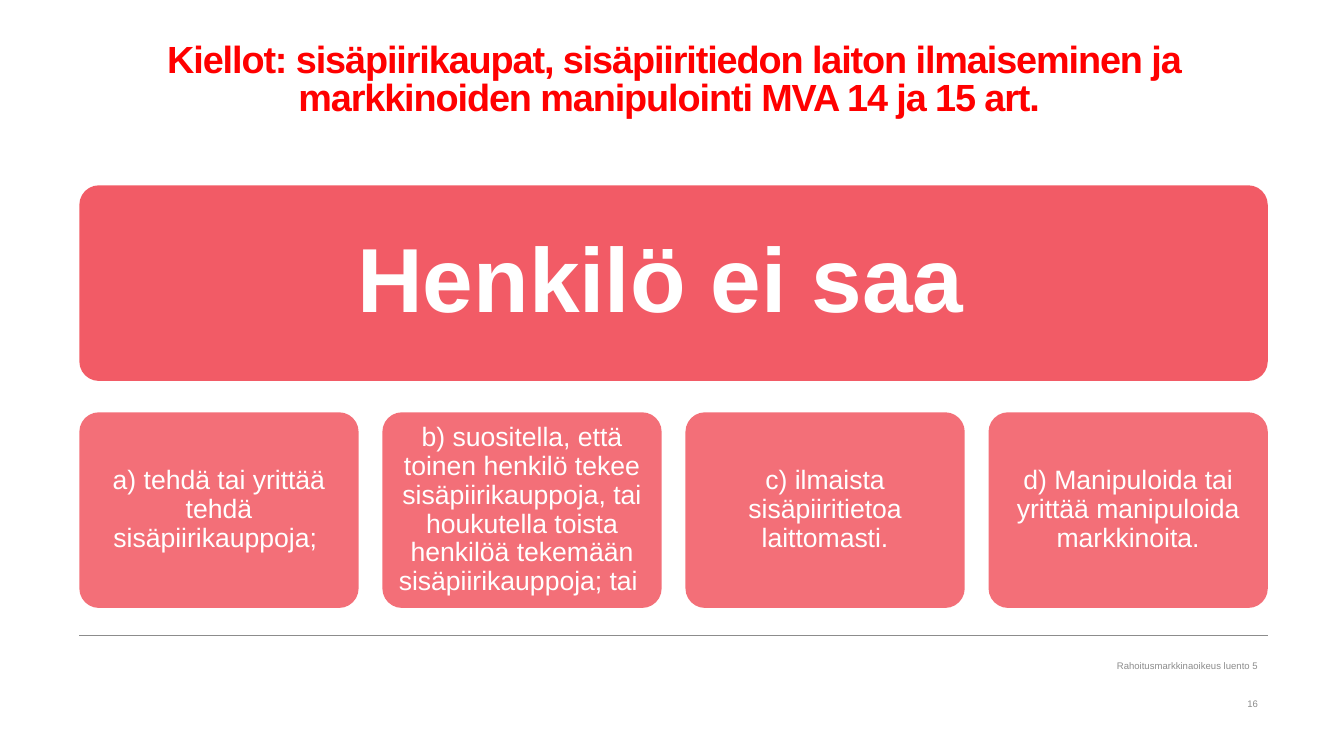
"""Build the slide on prohibited insider dealing and market manipulation."""
from lxml.etree import SubElement
from pptx import Presentation
from pptx.dml.color import RGBColor
from pptx.enum.shapes import MSO_CONNECTOR, MSO_SHAPE
from pptx.enum.text import MSO_ANCHOR, PP_ALIGN
from pptx.oxml.ns import qn
from pptx.util import Cm, Pt

RED = RGBColor(0xFF, 0x00, 0x00)
CORAL = RGBColor(0xEF, 0x33, 0x40)
WHITE = RGBColor(0xFF, 0xFF, 0xFF)
GREY = RGBColor(0x8C, 0x8C, 0x8C)

LEFT, WIDTH = 2.0, 29.95
BOX_HEIGHT = 4.93
BANNER_TOP, CARD_TOP = 4.67, 10.39
CARD_GAP = 0.6
RULE_TOP = 16.02
TITLE = ("Kiellot: sisäpiirikaupat, sisäpiiritiedon laiton ilmaiseminen ja "
         "markkinoiden manipulointi MVA 14 ja 15 art. ")
PROHIBITIONS = [
    "a) tehdä tai yrittää tehdä sisäpiirikauppoja; ",
    "b) suositella, että toinen henkilö tekee sisäpiirikauppoja, tai "
    "houkutella toista henkilöä tekemään sisäpiirikauppoja; tai ",
    "c) ilmaista sisäpiiritietoa laittomasti.",
    "d) Manipuloida tai yrittää manipuloida markkinoita.",
]
FOOTERS = [("Rahoitusmarkkinaoikeus luento 5", 16.54), ("16", 17.5)]


class SlideBuilder:
    """Hold the shared style and the slide being built."""

    font_name = "Arial"

    def __init__(self, slide):
        """Keep the slide to draw on."""
        self.slide = slide

    def fill_text(self, shape, text, font, insets, align=PP_ALIGN.CENTER,
                  anchor=MSO_ANCHOR.MIDDLE, line_spacing=1.0, tracking=0):
        """Put one formatted paragraph into a shape."""
        frame = shape.text_frame
        sides = ("margin_left", "margin_top", "margin_right", "margin_bottom")
        frame_format = dict(zip(sides, map(Cm, insets)))
        frame_format.update(word_wrap=True, vertical_anchor=anchor)
        paragraph = frame.paragraphs[0]
        run = paragraph.add_run()
        run.text = text
        run.font.color.rgb = font["color"]
        font_format = {"name": self.font_name, "size": Pt(font["size"]),
                       "bold": font.get("bold", False)}
        paragraph_format = {"alignment": align, "line_spacing": line_spacing}
        for target, values in ((frame, frame_format), (run.font, font_format),
                               (paragraph, paragraph_format)):
            for name, value in values.items():
                setattr(target, name, value)
        if tracking:
            run._r.get_or_add_rPr().set("spc", str(tracking))

    def text_box(self, text, left, top, width, height, font, insets, **layout):
        """Add a plain text box."""
        shape = self.slide.shapes.add_textbox(
            Cm(left), Cm(top), Cm(width), Cm(height))
        self.fill_text(shape, text, font, insets, **layout)

    def rounded_box(self, text, left, top, width, opacity, font, inset):
        """Add a translucent rounded box with centred text."""
        shape = self.slide.shapes.add_shape(
            MSO_SHAPE.ROUNDED_RECTANGLE,
            Cm(left), Cm(top), Cm(width), Cm(BOX_HEIGHT))
        shape.adjustments[0] = 0.1
        shape.shadow.inherit = False
        shape.fill.solid()
        shape.fill.fore_color.rgb = CORAL
        color = shape._element.spPr.find(qn("a:solidFill"))[0]
        SubElement(color, qn("a:alpha")).set("val", str(opacity * 1000))
        shape.line.fill.background()
        self.fill_text(shape, text, font, [inset] * 4, line_spacing=0.9)

    def rule(self, left, top, width):
        """Add a thin horizontal line."""
        connector = self.slide.shapes.add_connector(
            MSO_CONNECTOR.STRAIGHT,
            Cm(left), Cm(top), Cm(left + width), Cm(top))
        connector.line.color.rgb = GREY
        connector.line.width = Pt(1)
        SubElement(connector._element.spPr, qn("a:effectLst"))


def main():
    """Create and save the presentation."""
    presentation = Presentation()
    presentation.slide_width = Cm(33.87)
    presentation.slide_height = Cm(19.05)
    slide = presentation.slides.add_slide(presentation.slide_layouts[6])
    builder = SlideBuilder(slide)

    builder.rule(LEFT, RULE_TOP, WIDTH)
    builder.text_box(TITLE, LEFT, 1.07, WIDTH, 3.33,
                     {"size": 27, "color": RED, "bold": True}, [0] * 4,
                     anchor=MSO_ANCHOR.TOP, line_spacing=0.85, tracking=-80)
    builder.rounded_box("Henkilö ei saa ", LEFT, BANNER_TOP, WIDTH, 80,
                        {"size": 65, "color": WHITE, "bold": True}, 0.69)

    count = len(PROHIBITIONS)
    card_width = (WIDTH - CARD_GAP * (count - 1)) / count
    for index, text in enumerate(PROHIBITIONS):
        left = LEFT + index * (card_width + CARD_GAP)
        builder.rounded_box(text, left, CARD_TOP, card_width, 70,
                            {"size": 19, "color": WHITE}, 0.2)

    for text, top in FOOTERS:
        builder.text_box(text, 18.29, top, 13.41, 0.45,
                         {"size": 6.8, "color": GREY}, (0.25, 0.13, 0, 0.13),
                         align=PP_ALIGN.RIGHT)
    presentation.save("out.pptx")


if __name__ == "__main__":
    main()
